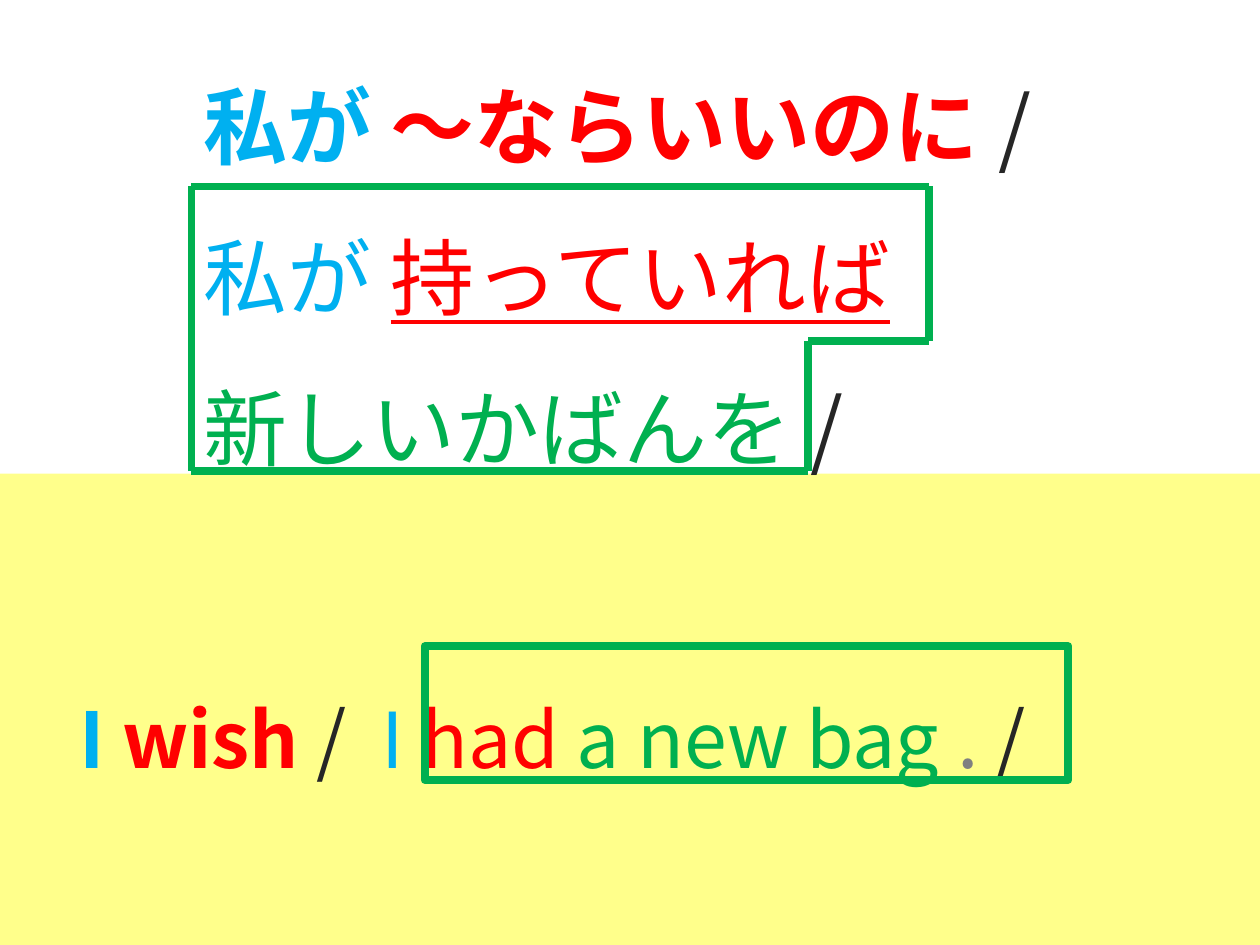
from dataclasses import dataclass

from lxml import etree
from pptx import Presentation
from pptx import util as u
from pptx.dml.color import RGBColor
from pptx.enum import shapes, text
from pptx.oxml.ns import qn


@dataclass(frozen=True)
class Theme:
    font: str = "Noto Sans CJK JP"
    subject: str = "00B0F0"
    verb: str = "FF0000"
    object: str = "00B050"
    slash: str = "262626"
    period: str = "808080"
    band: str = "FFFF8B"
    japanese_size: int = 48
    english_size: int = 44
    line_spacing: float = 1.5
    frame_width: float = 4.5


@dataclass(frozen=True)
class Phrase:
    words: str
    color: str
    bold: bool = False
    underline: bool = False


@dataclass(frozen=True)
class Box:
    left: float
    top: float
    width: float
    height: float

    def lengths(self) -> list:
        return [u.Inches(v) for v in (self.left, self.top, self.width, self.height)]


THEME = Theme()

JAPANESE = [
    [Phrase("私が ", THEME.subject, bold=True),
     Phrase("～ならいいのに ", THEME.verb, bold=True),
     Phrase("/", THEME.slash)],
    [Phrase("私が ", THEME.subject),
     Phrase("持っていれば", THEME.verb, underline=True)],
    [Phrase("新しいかばんを ", THEME.object),
     Phrase("/", THEME.slash)],
]
ENGLISH = [
    [Phrase("I ", THEME.subject, bold=True),
     Phrase("wish ", THEME.verb, bold=True),
     Phrase("/  ", THEME.slash),
     Phrase("I ", THEME.subject),
     Phrase("had", THEME.verb, underline=True),
     Phrase(" ", THEME.period),
     Phrase("a new bag ", THEME.object),
     Phrase(". ", THEME.period),
     Phrase("/", THEME.slash)],
]

# Corners of the stepped frame around the Japanese clause
CLAUSE_CORNERS = [(1.52, 1.48), (7.37, 1.48), (7.37, 2.71),
                  (6.41, 2.71), (6.41, 3.74), (1.52, 3.74)]


def add_rectangle(slide, box: Box):
    shape = slide.shapes.add_shape(shapes.MSO_SHAPE.RECTANGLE, *box.lengths())
    shape.shadow.inherit = False
    return shape


def add_sentences(slide, box: Box, lines: list[list[Phrase]], size: int) -> None:
    frame = slide.shapes.add_textbox(*box.lengths()).text_frame
    frame.word_wrap = True
    frame.auto_size = text.MSO_AUTO_SIZE.SHAPE_TO_FIT_TEXT
    for index, phrases in enumerate(lines):
        paragraph = frame.add_paragraph() if index else frame.paragraphs[0]
        paragraph.line_spacing = THEME.line_spacing
        for phrase in phrases:
            run = paragraph.add_run()
            run.text = phrase.words
            font = run.font
            font.size = u.Pt(size)
            font.bold = phrase.bold
            font.underline = phrase.underline
            font.color.rgb = RGBColor.from_string(phrase.color)
            font.name = THEME.font
            # East Asian typeface for the Japanese characters
            east_asian = etree.SubElement(run._r.get_or_add_rPr(), qn("a:ea"))
            east_asian.set("typeface", THEME.font)


def style_frame(line) -> None:
    line.color.rgb = RGBColor.from_string(THEME.object)
    line.width = u.Pt(THEME.frame_width)


def add_stepped_frame(slide, corners: list[tuple[float, float]]) -> None:
    group = slide.shapes.add_group_shape()
    for start, end in zip(corners, corners[1:] + corners[:1]):
        connector = group.shapes.add_connector(
            shapes.MSO_CONNECTOR.STRAIGHT, *[u.Inches(v) for v in start + end])
        style_frame(connector.line)
        etree.SubElement(connector._element.spPr, qn("a:effectLst"))


def main() -> None:
    presentation = Presentation()
    presentation.slide_width = u.Inches(10)
    presentation.slide_height = u.Inches(7.5)
    slide = presentation.slides.add_slide(presentation.slide_layouts[6])

    # Yellow band behind the English sentence
    band = add_rectangle(slide, Box(0, 3.76, 10, 3.74))
    band.fill.solid()
    band.fill.fore_color.rgb = RGBColor.from_string(THEME.band)
    band.line.fill.background()

    # Sentences
    add_sentences(slide, Box(0.53, 5.07, 8.94, 1.12), ENGLISH, THEME.english_size)
    add_sentences(slide, Box(1.52, 0.14, 6.96, 3.64), JAPANESE, THEME.japanese_size)

    # Green frames around the clauses
    english_frame = add_rectangle(slide, Box(3.37, 5.13, 5.11, 1.06))
    english_frame.fill.background()
    style_frame(english_frame.line)
    add_stepped_frame(slide, CLAUSE_CORNERS)

    presentation.save("out.pptx")


if __name__ == "__main__":
    main()
